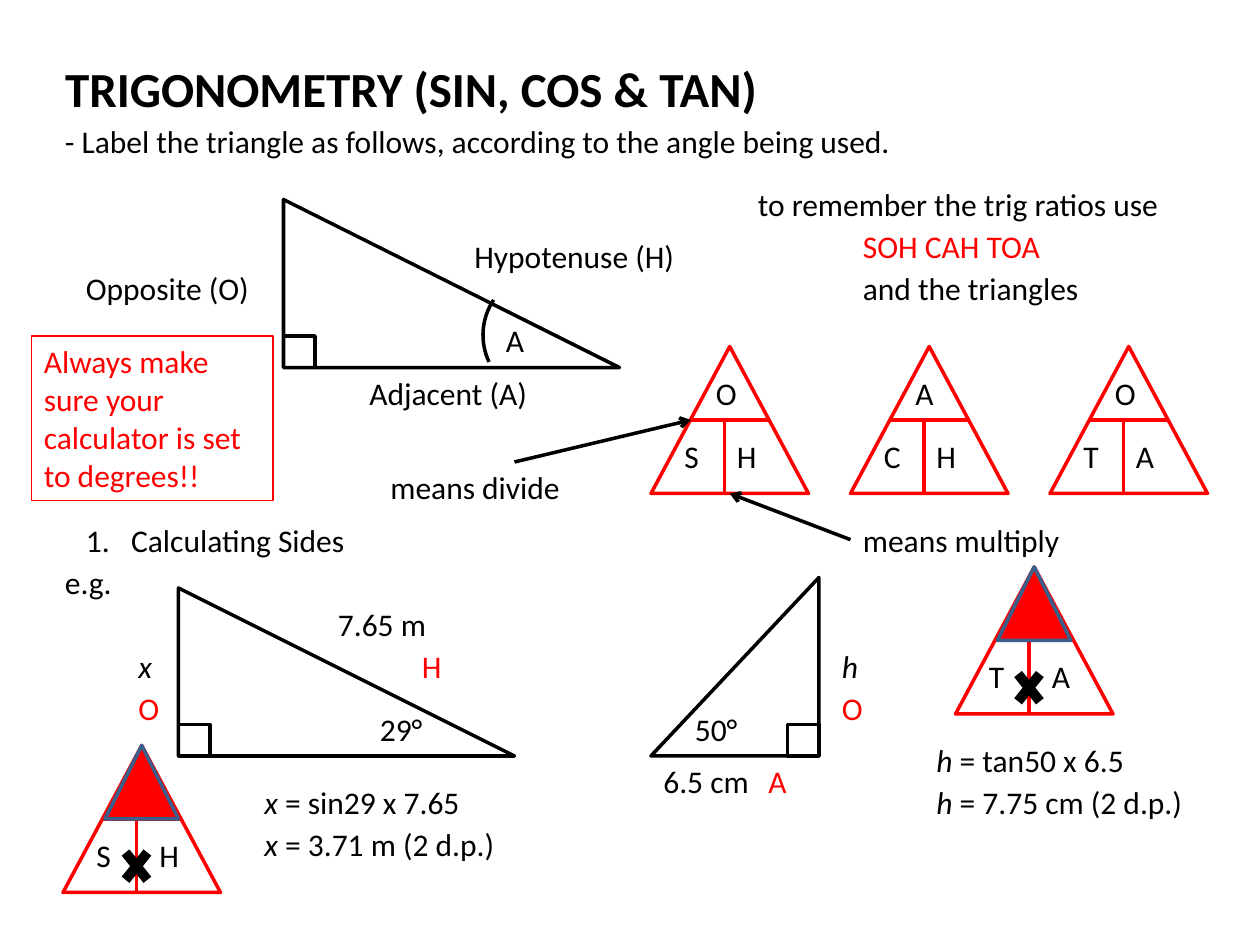
from lxml.etree import SubElement
from pptx import Presentation
from pptx.dml.color import RGBColor
from pptx.enum.shapes import MSO_CONNECTOR as Connector, MSO_SHAPE as Preset
from pptx.enum.text import MSO_ANCHOR as Anchor, MSO_AUTO_SIZE as AutoSize, PP_ALIGN as Align
from pptx.oxml.ns import qn
from pptx.util import Emu, Pt

PX = 7620
BLACK = RGBColor(0x00, 0x00, 0x00)
RED = RGBColor(0xFF, 0x00, 0x00)
STEEL = RGBColor(0x3A, 0x5F, 0x8C)
FONT = "Calibri"
LINE_HEIGHT = 48
CORNER = 30
FRAME = {"word_wrap": True, "auto_size": AutoSize.SHAPE_TO_FIT_TEXT, "vertical_anchor": Anchor.TOP}


def px(*lengths):
    """Turn px lengths into EMU."""
    return [Emu(length * PX) for length in lengths]


def assign(target, values):
    """Set each attribute named in a dict of format values."""
    for name, value in values.items():
        setattr(target, name, value)


def write(holder, parts, colour=BLACK, size=18, bold=False):
    """Fill a holder with one paragraph of (words, italic) parts."""
    frame = holder.text_frame
    assign(frame, FRAME)
    paragraph = frame.paragraphs[0]
    paragraph.alignment = Align.LEFT
    for words, italic in parts:
        run = paragraph.add_run()
        run.text = words
        assign(run.font, {"name": FONT, "size": Pt(size), "bold": bold, "italic": italic})
        run.font.color.rgb = colour


def label(slide, left, top, width, words, colour=BLACK, variable=""):
    """Place a line of text, led by an italic variable if there is one."""
    box = slide.shapes.add_textbox(*px(left, top, width, LINE_HEIGHT))
    parts = [(variable, True), (words, False)]
    write(box, [part for part in parts if part[0]], colour)
    return box


def outline(slide, preset, box, line=BLACK, fill=None, weight=2):
    """Draw a preset shape with the given line and fill."""
    shape = slide.shapes.add_shape(preset, *px(*box))
    shape.shadow.inherit = False
    if fill is None:
        shape.fill.background()
    else:
        shape.fill.solid()
        shape.fill.fore_color.rgb = fill
    if line is None:
        shape.line.fill.background()
    else:
        shape.line.color.rgb = line
        shape.line.width = Pt(weight)
    return shape


def stroke(slide, start, end, colour=BLACK, arrow=False):
    """Draw a straight line, with an arrowhead at its end if asked."""
    line = slide.shapes.add_connector(Connector.STRAIGHT, *px(*start, *end))
    line.line.color.rgb = colour
    line.line.width = Pt(2)
    if arrow:
        SubElement(line.line._get_or_add_ln(), qn("a:tailEnd"), type="arrow")
    SubElement(line._element.spPr, qn("a:effectLst"))
    return line


def right_triangle(slide, box, mirrored=False):
    """Draw a right-angled triangle and its corner mark."""
    left, top, width, height = box
    triangle = outline(slide, Preset.RIGHT_TRIANGLE, box)
    if mirrored:
        triangle._element.spPr.xfrm.set("flipH", "1")
    corner_left = left + width - CORNER if mirrored else left
    outline(slide, Preset.RECTANGLE, (corner_left, top + height - CORNER, CORNER, CORNER))


def formula_triangle(slide, left, top, letters, solved=False):
    """Draw a ratio triangle; a solved one has its top covered and a times sign."""
    width, height = 150, 140
    middle = top + height // 2
    outline(slide, Preset.ISOSCELES_TRIANGLE, (left, top, width, height), RED)
    stroke(slide, (left + 37, middle), (left + 112, middle), RED)
    stroke(slide, (left + 70, middle), (left + 70, top + height - 1), RED)
    above, first, second = letters
    label(slide, left + 20, top + 80, 60, first)
    label(slide, left + (80 if solved else 70), top + 80, 60, second)
    if solved:
        outline(slide, Preset.ISOSCELES_TRIANGLE, (left + 40, top, 70, 70), STEEL, RED)
        outline(slide, Preset.MATH_MULTIPLY, (left + 50, top + 90, 40, 50), None, BLACK)
    else:
        label(slide, left + 50, top + 20, 60, above)


def heading(slide, left, top, width):
    """Place the title and the instruction under it."""
    title = slide.shapes.title
    assign(title, dict(zip(("left", "top", "width", "height"), px(left, top, width, 68))))
    write(title, [("TRIGONOMETRY (SIN, COS & TAN)", False)], size=28, bold=True)
    label(slide, left, top + 60, width,
          "- Label the triangle as follows, according to the angle being used.")


def side_names(slide, left, top):
    """Draw the triangle with its named sides and marked angle."""
    right_triangle(slide, (left, top, 320, 160))
    arc = outline(slide, Preset.ARC, (left + 190, top + 69, 120, 120))
    arc.rotation = 244.7
    arc.adjustments[0] = 162
    arc.adjustments[1] = 197.46
    for dx, dy, width, words in (
        (200, 110, 60, "A"),
        (170, 30, 240, "Hypotenuse (H)"),
        (-200, 60, 240, "Opposite (O)"),
        (70, 160, 240, "Adjacent (A)"),
    ):
        label(slide, left + dx, top + dy, width, words)


def ratio_reminder(slide, left, top):
    """Place the memory aid, its three triangles and what their lines mean."""
    label(slide, left + 90, top, 460, "to remember the trig ratios use")
    label(slide, left + 190, top + 40, 290, "SOH CAH TOA", RED)
    label(slide, left + 190, top + 80, 270, "and the triangles")
    for index, letters in enumerate(("OSH", "ACH", "OTA")):
        formula_triangle(slide, left + 190 * index, top + 160, letters)
    label(slide, left - 260, top + 270, 270, "means divide")
    stroke(slide, (left - 130, top + 270), (left + 38, top + 230), arrow=True)
    multiply = label(slide, left + 190, top + 320, 270, "means multiply")
    arrow = stroke(slide, (left + 190, top + 344), (left + 75, top + 300), arrow=True)
    arrow.begin_connect(multiply, 1)


def warning(slide, box):
    """Place the framed reminder about degrees."""
    note = outline(slide, Preset.RECTANGLE, box, RED, weight=0.75)
    write(note, [("Always make sure your calculator is set to degrees!!", False)], RED)


def sine_example(slide, left, top):
    """Place the worked example that finds x with sine."""
    right_triangle(slide, (left, top, 320, 160))
    label(slide, left + 180, top + 110, 70, "29°")
    label(slide, left - 50, top + 50, 70, "", variable="x")
    label(slide, left + 140, top + 10, 120, "7.65 m")
    label(slide, left + 220, top + 50, 60, "H", RED)
    label(slide, left - 50, top + 90, 60, "O", RED)
    formula_triangle(slide, left - 110, top + 150, "OSH", solved=True)
    label(slide, left + 70, top + 180, 290, "= sin29 x 7.65", variable="x ")
    label(slide, left + 70, top + 220, 290, "= 3.71 m (2 d.p.)", variable="x ")


def tangent_example(slide, left, top):
    """Place the worked example that finds h with tangent."""
    right_triangle(slide, (left, top, 160, 170), mirrored=True)
    label(slide, left + 30, top + 120, 70, "50°")
    label(slide, left, top + 170, 120, "6.5 cm")
    label(slide, left + 170, top + 60, 70, "", variable="h")
    label(slide, left + 170, top + 100, 60, "O", RED)
    label(slide, left + 100, top + 170, 60, "A", RED)
    formula_triangle(slide, left + 290, top - 10, "OTA", solved=True)
    label(slide, left + 260, top + 150, 290, "= tan50 x 6.5", variable="h ")
    label(slide, left + 260, top + 190, 290, "= 7.75 cm (2 d.p.)", variable="h ")


def main():
    """Build the trigonometry slide."""
    deck = Presentation()
    deck.slide_width, deck.slide_height = px(1200, 900)
    slide = deck.slides.add_slide(deck.slide_layouts[5])
    heading(slide, 50, 50, 950)
    side_names(slide, 270, 190)
    ratio_reminder(slide, 620, 170)
    label(slide, 70, 490, 320, "1.   Calculating Sides")
    label(slide, 50, 530, 90, "e.g.")
    sine_example(slide, 170, 560)
    tangent_example(slide, 620, 550)
    warning(slide, (30, 320, 230, 157))
    deck.save("out.pptx")


if __name__ == "__main__":
    main()
